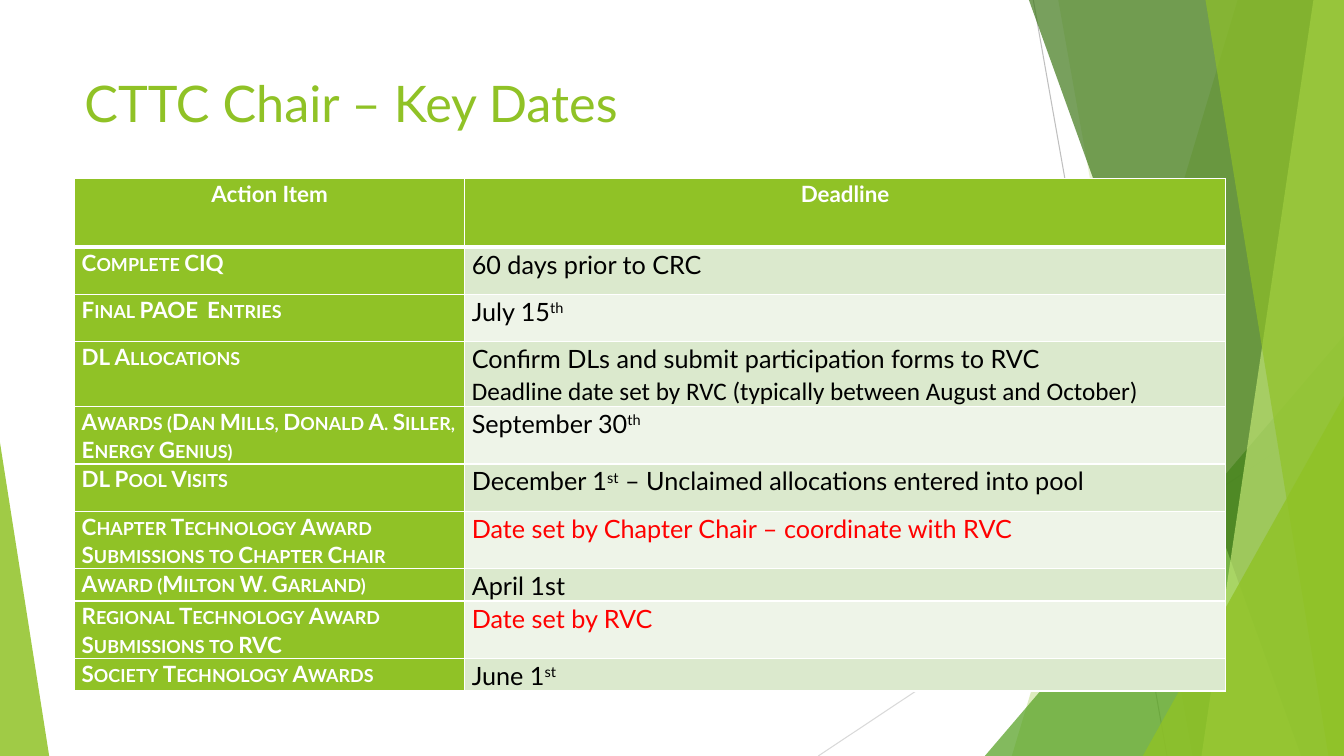
from dataclasses import dataclass

from lxml.etree import SubElement
from pptx import Presentation
from pptx.dml.color import RGBColor
from pptx.enum.shapes import MSO_CONNECTOR, MSO_SHAPE
from pptx.enum.text import MSO_ANCHOR, PP_ALIGN
from pptx.oxml.ns import qn
from pptx.shapes.autoshape import Shape
from pptx.slide import Slide
from pptx.table import _Cell
from pptx.text.text import _Paragraph
from pptx.util import Cm, Pt

WHITE = RGBColor(0xFF, 0xFF, 0xFF)
BLACK = RGBColor(0x00, 0x00, 0x00)
RED = RGBColor(0xFF, 0x00, 0x00)
LIME = RGBColor(0x90, 0xC2, 0x26)
GREEN = RGBColor(0x54, 0xA0, 0x21)
FOREST = RGBColor(0x3F, 0x78, 0x19)
PALE_LIME = RGBColor(0xC0, 0xE4, 0x74)
BAND_DARK = RGBColor(0xDB, 0xE9, 0xCD)
BAND_LIGHT = RGBColor(0xEE, 0xF4, 0xE8)
GREY = RGBColor(0xBF, 0xBF, 0xBF)
LIGHT_GREY = RGBColor(0xD9, 0xD9, 0xD9)

PAGE_WIDTH, PAGE_HEIGHT = 33.87, 19.05
BODY_FONT, DETAIL_FONT = "Lato", "Calibri"


@dataclass
class Ray:
    start: tuple[float, float]
    end: tuple[float, float]
    color: RGBColor


@dataclass
class Facet:
    """Panel from a slanted left side to the right page edge."""
    top_x: float
    bottom_x: float
    color: RGBColor
    opacity: int


@dataclass
class Spike:
    """Right triangle standing on the page bottom; peak is 0 (left) or 1 (right)."""
    left: float
    top: float
    width: float
    peak: int
    color: RGBColor
    opacity: int


@dataclass
class KeyDate:
    """Carets enclose superscripts in the deadline; a line break starts the detail."""
    action: str
    deadline: str
    height: float
    color: RGBColor = BLACK


RAYS = [
    Ray((26.04, 0), (29.41, PAGE_HEIGHT), GREY),
    Ray((PAGE_WIDTH, 10.24), (20.62, PAGE_HEIGHT), LIGHT_GREY),
]
DECORATION = [
    Facet(31.19, 25.5, LIME, 30),
    Facet(26.67, 30.05, LIME, 20),
    Spike(24.82, 8.46, 9.05, 1, GREEN, 72),
    Facet(25.93, 32.79, FOREST, 70),
    Facet(33.1, 30.28, PALE_LIME, 70),
    Facet(30.38, 33.48, LIME, 65),
    Spike(28.8, 9.98, 5.07, 1, LIME, 80),
    Spike(0, 11.15, 1.24, 0, LIME, 85),
]
HEADINGS = ["Action Item", "Deadline"]
HEADER_HEIGHT = 1.73
COLUMN_WIDTHS = [9.83, 19.18]
KEY_DATES = [
    KeyDate("Complete CIQ", "60 days prior to CRC", 1.19),
    KeyDate("Final PAOE  Entries", "July 15^th^", 1.19),
    KeyDate("DL Allocations",
            "Confirm DLs and submit participation forms to RVC\n"
            "Deadline date set by RVC (typically between August and October)", 1.19),
    KeyDate("Awards (Dan Mills, Donald A. Siller, Energy Genius)", "September 30^th^", 1.22),
    KeyDate("DL Pool Visits", "December 1^st^ – Unclaimed allocations entered into pool", 1.19),
    KeyDate("Chapter Technology Award Submissions to Chapter Chair",
            "Date set by Chapter Chair – coordinate with RVC", 0.71, RED),
    KeyDate("Award (Milton W. Garland)", "April 1st", 0.71),
    KeyDate("Regional Technology Award Submissions to RVC", "Date set by RVC", 0.71, RED),
    KeyDate("Society Technology Awards", "June 1^st^", 0.71),
]


def draw_ray(page: Slide, ray: Ray) -> None:
    line = page.shapes.add_connector(
        MSO_CONNECTOR.STRAIGHT, *map(Cm, ray.start), *map(Cm, ray.end))
    line.line.color.rgb = ray.color
    line.line.width = Pt(0.75)
    SubElement(line._element.spPr, qn("a:effectLst"))


def outline(page: Slide, item: Facet | Spike) -> Shape:
    if isinstance(item, Spike):
        triangle = page.shapes.add_shape(
            MSO_SHAPE.ISOSCELES_TRIANGLE, Cm(item.left), Cm(item.top),
            Cm(item.width), Cm(PAGE_HEIGHT - item.top))
        triangle.adjustments[0] = item.peak
        return triangle
    corners = [(PAGE_WIDTH, 0), (PAGE_WIDTH, PAGE_HEIGHT), (item.bottom_x, PAGE_HEIGHT)]
    builder = page.shapes.build_freeform(Cm(item.top_x), Cm(0))
    builder.add_line_segments([(Cm(x), Cm(y)) for x, y in corners], close=True)
    return builder.convert_to_shape()


def draw_decoration(page: Slide, item: Facet | Spike) -> None:
    shape = outline(page, item)
    shape.shadow.inherit = False
    shape.line.fill.background()
    shape.fill.solid()
    shape.fill.fore_color.rgb = item.color
    color = shape._element.spPr.find(qn("a:solidFill"))[0]
    SubElement(color, qn("a:alpha"), val=str(item.opacity * 1000))


def set_font(para: _Paragraph, size: float, color: RGBColor,
             bold: bool = False, name: str = BODY_FONT) -> None:
    para.font.name = name
    para.font.size = Pt(size)
    para.font.bold = bold
    para.font.color.rgb = color


def format_cell(cell: _Cell, fill: RGBColor, top: float = 1, bottom: float = 1) -> None:
    """Set margins, white borders (widths in points) and fill."""
    cell.margin_left = cell.margin_right = Cm(0.18)
    cell.margin_top = cell.margin_bottom = 0
    properties = cell._tc.get_or_add_tcPr()
    for side, width in {"L": 1, "R": 1, "T": top, "B": bottom}.items():
        border = SubElement(properties, qn(f"a:ln{side}"), w=str(Pt(width)))
        SubElement(SubElement(border, qn("a:solidFill")), qn("a:srgbClr"), val=str(WHITE))
    cell.fill.solid()
    cell.fill.fore_color.rgb = fill


def write_label(cell: _Cell, text: str) -> _Paragraph:
    para = cell.text_frame.paragraphs[0]
    para.text = text
    para.line_spacing = 1.07
    set_font(para, 16, WHITE, bold=True)
    return para


def write_deadline(cell: _Cell, key_date: KeyDate) -> None:
    frame = cell.text_frame
    for index, line in enumerate(key_date.deadline.split("\n")):
        para = frame.add_paragraph() if index else frame.paragraphs[0]
        para.line_spacing = 1.07
        set_font(para, 18, key_date.color, name=DETAIL_FONT if index else BODY_FONT)
        for part, text in enumerate(line.split("^")):
            if text:
                span = para.add_run()
                span.text = text
                if part % 2:
                    span.font._element.set("baseline", "30000")


def draw_title(page: Slide) -> None:
    box = page.shapes.add_textbox(Cm(1.88), Cm(1.7), Cm(23.88), Cm(3.66))
    box.text_frame.word_wrap = True
    box.text_frame.vertical_anchor = MSO_ANCHOR.TOP
    para = box.text_frame.paragraphs[0]
    para.text = "CTTC Chair – Key Dates"
    set_font(para, 36, LIME)


def draw_key_dates(page: Slide) -> None:
    heights = [HEADER_HEIGHT] + [key_date.height for key_date in KEY_DATES]
    table = page.shapes.add_table(
        len(heights), len(HEADINGS), Cm(1.88), Cm(4.5),
        Cm(sum(COLUMN_WIDTHS)), Cm(sum(heights))).table
    table.first_row = table.horz_banding = False
    for column, width in zip(table.columns, COLUMN_WIDTHS):
        column.width = Cm(width)
    for row, height in zip(table.rows, heights):
        row.height = Cm(height)
    for column, heading in enumerate(HEADINGS):
        cell = table.cell(0, column)
        format_cell(cell, LIME, bottom=3)
        write_label(cell, heading).alignment = PP_ALIGN.CENTER
    for row, key_date in enumerate(KEY_DATES, start=1):
        action, deadline = table.cell(row, 0), table.cell(row, 1)
        top = 3 if row == 1 else 1
        format_cell(action, LIME, top)
        format_cell(deadline, BAND_DARK if row % 2 else BAND_LIGHT, top)
        write_label(action, key_date.action).font._element.set("cap", "small")
        write_deadline(deadline, key_date)


def main() -> None:
    deck = Presentation()
    deck.slide_width, deck.slide_height = Cm(PAGE_WIDTH), Cm(PAGE_HEIGHT)
    page = deck.slides.add_slide(deck.slide_layouts[6])
    for ray in RAYS:
        draw_ray(page, ray)
    for item in DECORATION:
        draw_decoration(page, item)
    draw_title(page)
    draw_key_dates(page)
    deck.save("out.pptx")


if __name__ == "__main__":
    main()
